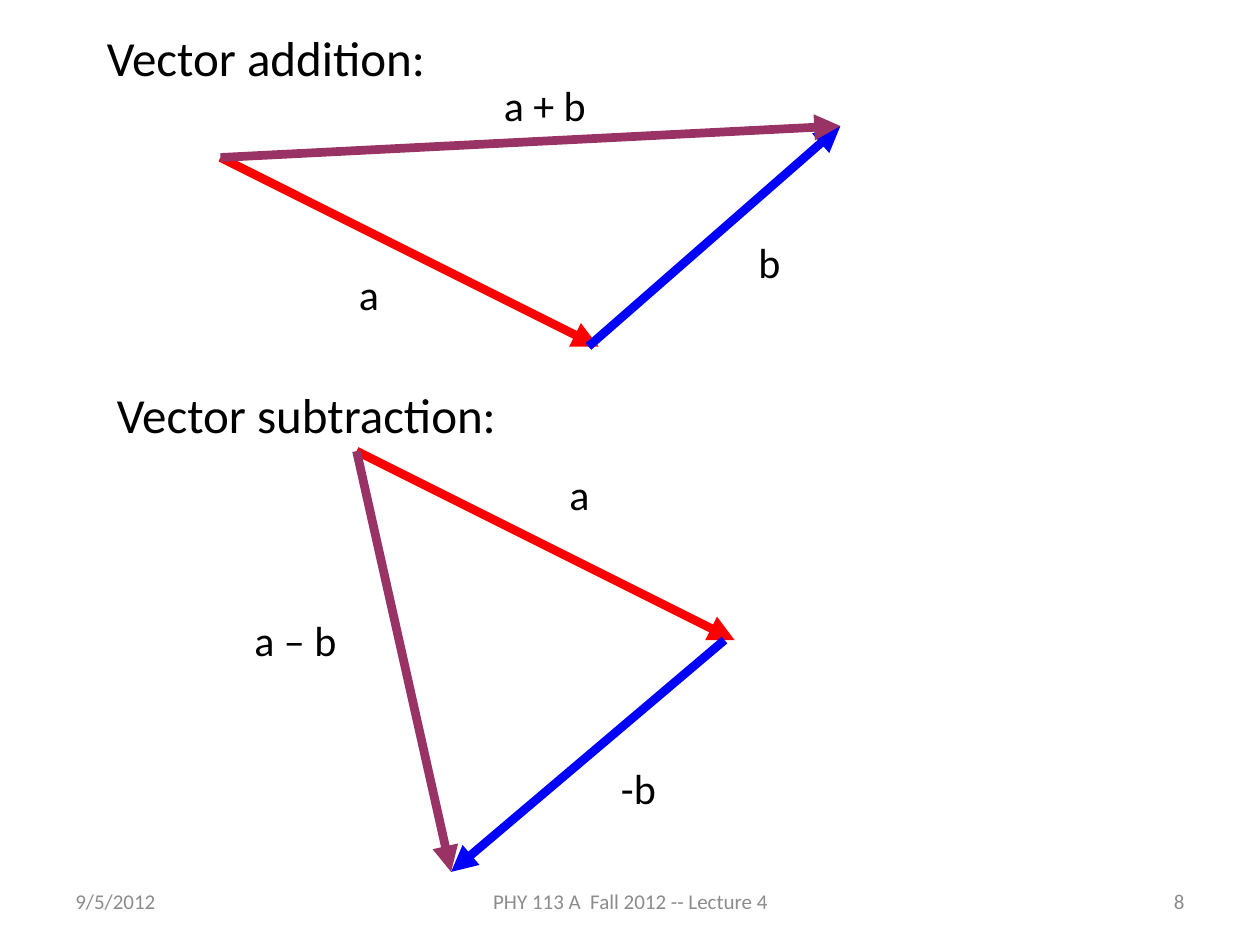
import pptx
import pptx.util
import pptx.dml.color
import pptx.enum.shapes
import pptx.enum.text
import pptx.oxml
import pptx.oxml.ns
from pptx.util import Inches

COLORS = {
    "a": "FF0000",
    "b": "0000FF",
    "result": "993366",
    "text": "000000",
    "footer": "8C8C8C",
}
ALIGN = pptx.enum.text.PP_ALIGN
ANCHOR = pptx.enum.text.MSO_ANCHOR
AUTO_SIZE = pptx.enum.text.MSO_AUTO_SIZE

ADDITION_START, ADDITION_END = (1.75, 1.25), (6.67, 1)
SUBTRACTION_START, SUBTRACTION_END = (2.83, 3.58), (3.58, 6.92)

VECTORS = [
    ("a", ADDITION_START, (4.75, 2.75)),
    ("b", (4.67, 2.75), ADDITION_END),
    ("result", ADDITION_START, ADDITION_END),
    ("a", SUBTRACTION_START, (5.83, 5.08)),
    ("b", (5.75, 5.08), SUBTRACTION_END),
    ("result", SUBTRACTION_START, SUBTRACTION_END),
]
HEADINGS = [
    ("Vector addition:", (0.75, 0.17, 8.17, 1.28)),
    ("Vector subtraction:", (0.83, 3, 4, 0.57)),
]
LABELS = [
    ("a", (2.75, 2.08, 0.36, 0.5), False),
    ("b", (5.92, 1.83, 0.38, 0.5), False),
    ("a – b", (1.92, 4.83, 0.95, 0.81), True),
    ("a", (4.42, 3.67, 0.36, 0.5), False),
    ("-b", (4.83, 6, 0.48, 0.5), False),
    ("a + b", (3.9, 0.58, 0.93, 0.5), True),
]
FOOTERS = [
    ("9/5/2012", 0.5, 2.33, ALIGN.LEFT),
    ("PHY 113 A  Fall 2012 -- Lecture 4", 3.42, 3.17, ALIGN.CENTER),
    ("8", 7.17, 2.33, ALIGN.RIGHT),
]


def set_attributes(target, values):
    for name, value in values.items():
        setattr(target, name, value)


def rgb(color):
    return pptx.dml.color.RGBColor.from_string(COLORS[color])


def add_text(slide, text, box, size, color="text", align=ALIGN.LEFT, **frame_format):
    shape = slide.shapes.add_textbox(*map(Inches, box))
    set_attributes(shape.text_frame, {"word_wrap": True, **frame_format})
    paragraph = shape.text_frame.paragraphs[0]
    paragraph.alignment = align
    run = paragraph.add_run()
    run.text = text
    set_attributes(run.font, {"name": "Calibri", "size": pptx.util.Pt(size)})
    run.font.color.rgb = rgb(color)


def add_vector(slide, color, start, end):
    connector = slide.shapes.add_connector(
        pptx.enum.shapes.MSO_CONNECTOR.STRAIGHT, *map(Inches, start + end)
    )
    connector.line.width = pptx.util.Pt(5)
    connector.line.color.rgb = rgb(color)
    properties = connector.element.spPr
    arrowhead = pptx.oxml.parse_xml(
        f'<a:tailEnd {pptx.oxml.ns.nsdecls("a")} type="triangle"/>'
    )
    properties.find(pptx.oxml.ns.qn("a:ln")).append(arrowhead)
    properties.append(
        pptx.oxml.parse_xml(f'<a:effectLst {pptx.oxml.ns.nsdecls("a")}/>')
    )


def main():
    presentation = pptx.Presentation()
    set_attributes(
        presentation, {"slide_width": Inches(10), "slide_height": Inches(7.5)}
    )
    slide = presentation.slides.add_slide(presentation.slide_layouts[6])

    for text, left, width, align in FOOTERS:
        add_text(slide, text, (left, 6.95, width, 0.4), 12, "footer", align,
                 vertical_anchor=ANCHOR.MIDDLE)
    for text, box in HEADINGS:
        add_text(slide, text, box, 28, auto_size=AUTO_SIZE.SHAPE_TO_FIT_TEXT)
    for color, start, end in VECTORS:
        add_vector(slide, color, start, end)
    for text, box, wrap in LABELS:
        add_text(slide, text, box, 24, word_wrap=wrap,
                 auto_size=AUTO_SIZE.SHAPE_TO_FIT_TEXT)

    presentation.save("out.pptx")


if __name__ == "__main__":
    main()
